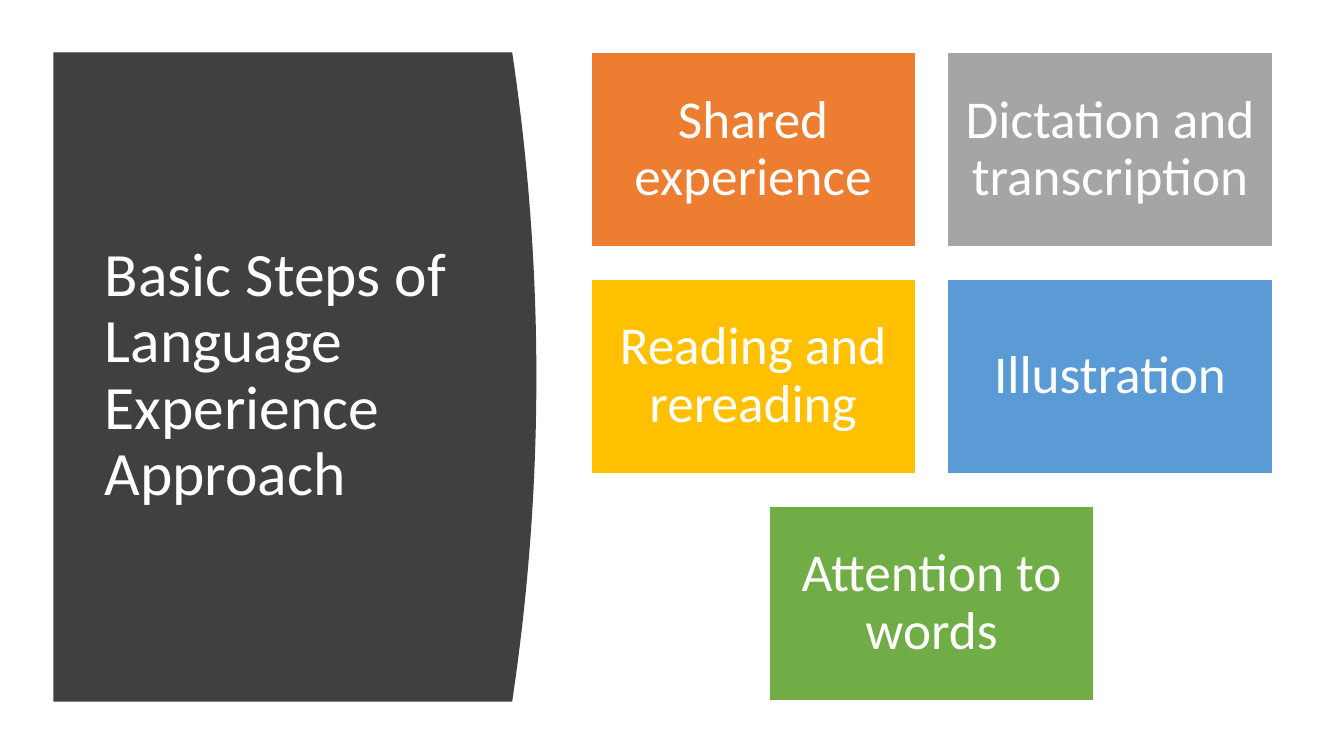
from dataclasses import dataclass

from pptx import Presentation
from pptx.dml.color import RGBColor
from pptx.enum.shapes import MSO_SHAPE
from pptx.enum.text import MSO_ANCHOR, PP_ALIGN
from pptx.util import Pt

RECT = MSO_SHAPE.RECTANGLE
MIDDLE = MSO_ANCHOR.MIDDLE
LEFT = PP_ALIGN.LEFT
CENTER = PP_ALIGN.CENTER
PX = 9144


@dataclass(frozen=True)
class Theme:
    """Colours, font and type sizes of the slide."""
    font: str = "Calibri"
    white: str = "FFFFFF"
    panel: str = "404040"
    title: int = 44
    card: int = 38


THEME = Theme()
TITLE = "Basic Steps of Language Experience Approach"
STEPS = [
    ("Shared experience", "ED7D31"),
    ("Dictation and transcription", "A5A5A5"),
    ("Reading and rereading", "FFC000"),
    ("Illustration", "5B9BD5"),
    ("Attention to words", "70AD47"),
]


def px(count):
    """Turn a length in px into EMU."""
    return round(count * PX)


def paint(shape, color):
    """Give a shape a flat fill without shadow."""
    shape.shadow.inherit = False
    shape.fill.solid()
    shape.fill.fore_color.rgb = RGBColor.from_string(color)


def write(shape, text, size, align, side, edge):
    """Set one white paragraph in the middle of a shape."""
    frame = shape.text_frame
    frame.word_wrap = True
    frame.vertical_anchor = MIDDLE
    frame.margin_left = frame.margin_right = px(side)
    frame.margin_top = frame.margin_bottom = px(edge)
    para = frame.paragraphs[0]
    para.alignment = align
    para.line_spacing = 0.9
    run = para.add_run()
    run.text = text
    run.font.name = THEME.font
    run.font.size = Pt(size)
    run.font.color.rgb = RGBColor.from_string(THEME.white)


def add_panel(slide, left, top, width, height):
    """Draw the dark panel with its bowed right edge and the title."""
    bulge, count = 24, 40
    flat = left + width - bulge
    curve = []
    for i in range(count + 1):
        part = i / count
        bow = 4 * bulge * part * (1 - part)
        curve.append((px(flat + bow), px(top + height * part)))
    outline = slide.shapes.build_freeform(px(left), px(top))
    outline.add_line_segments(curve + [(px(left), px(top + height))])
    panel = outline.convert_to_shape()
    paint(panel, THEME.panel)
    panel.line.fill.background()
    box = slide.shapes.add_textbox(
        px(left + 41), px(top + 59), px(width - 105), px(height - 120))
    write(box, TITLE, THEME.title, LEFT, 10, 5)


def add_cards(slide, left, top, width, height):
    """Lay the steps out in rows of two, with a short row centred."""
    cols, gap = 2, 32
    rows = -(-len(STEPS) // cols)
    wide = (width - gap * (cols - 1)) / cols
    high = (height - gap * (rows - 1)) / rows
    for i, (text, color) in enumerate(STEPS):
        row, col = divmod(i, cols)
        lack = cols - min(cols, len(STEPS) - row * cols)
        x = left + (col + lack / 2) * (wide + gap)
        y = top + row * (high + gap)
        card = slide.shapes.add_shape(RECT, px(x), px(y), px(wide), px(high))
        paint(card, color)
        card.line.color.rgb = RGBColor.from_string(THEME.white)
        card.line.width = Pt(1)
        write(card, text, THEME.card, CENTER, 16, 16)


def main():
    """Build the slide and save it."""
    deck = Presentation()
    deck.slide_width, deck.slide_height = px(1333), px(750)
    slide = deck.slides.add_slide(deck.slide_layouts[6])
    add_panel(slide, 53, 52, 479, 644)
    add_cards(slide, 586, 52, 676, 643)
    deck.save("out.pptx")


if __name__ == "__main__":
    main()
